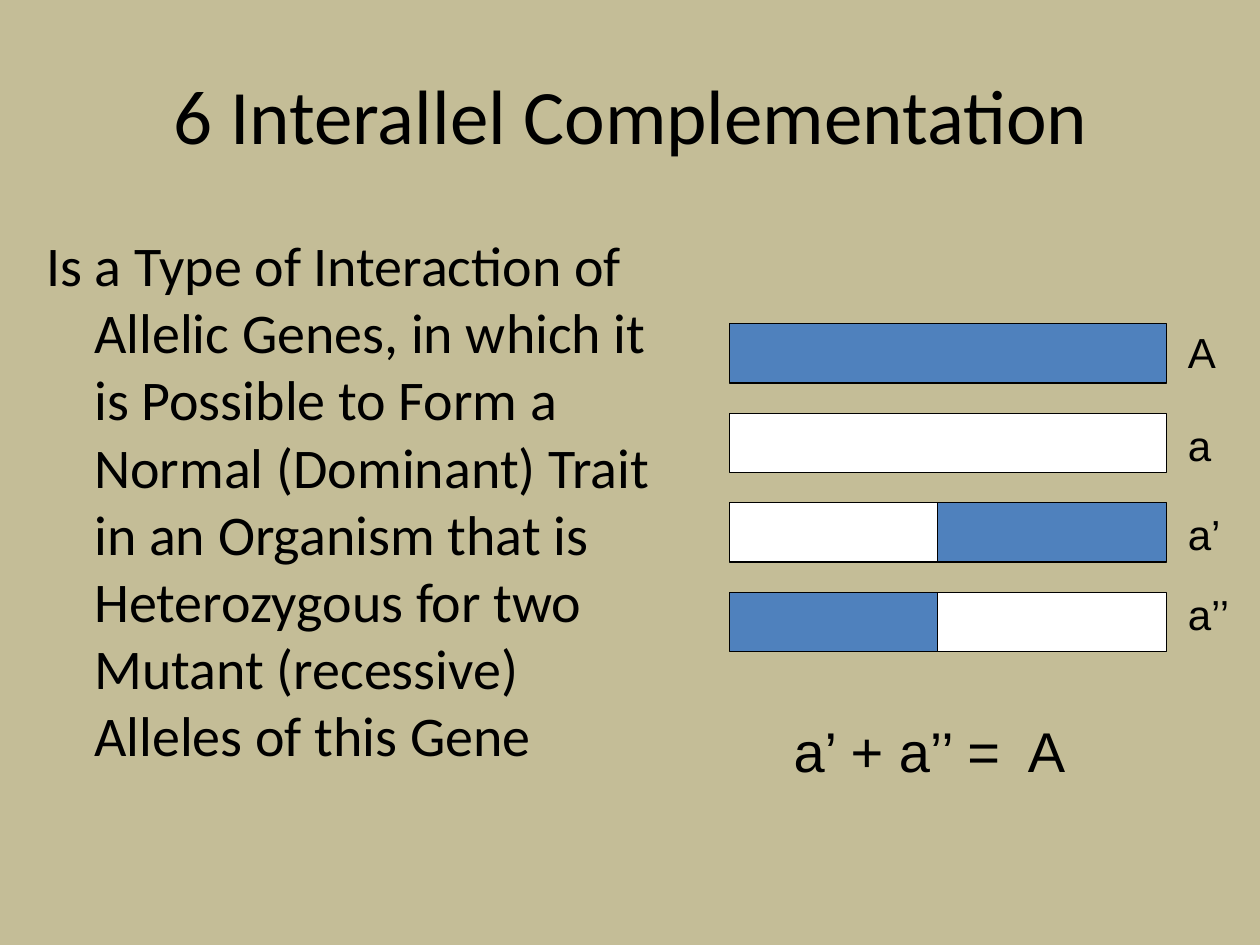
"""Build a slide on interallelic complementation with bars for each allele."""
import pptx
import pptx.dml.color
import pptx.enum.shapes
import pptx.enum.text
import pptx.util

Inches, Pt = pptx.util.Inches, pptx.util.Pt
PP_ALIGN, MSO_ANCHOR = pptx.enum.text.PP_ALIGN, pptx.enum.text.MSO_ANCHOR

TITLE = "6 Interallel Complementation"
DEFINITION = (
    "Is a Type of Interaction of Allelic Genes, in which it is Possible to Form "
    "a Normal (Dominant) Trait in an Organism that is Heterozygous for two "
    "Mutant (recessive) Alleles of this Gene"
)
FORMULA = "a’ + a’’ =  A"
BACKGROUND, BLACK, NORMAL, MUTANT = "C4BD97", "000000", "4F81BD", "FFFFFF"
ALLELES = [
    ("A", 2.54, 0.42, [NORMAL]),
    ("a", 3.28, 0.39, [MUTANT]),
    ("a’", 3.99, 0.46, [MUTANT, NORMAL]),
    ("a’’", 4.62, 0.54, [NORMAL, MUTANT]),
]
BAR_LEFT, BAR_TOP, BAR_W, BAR_H, BAR_PITCH = 5.79, 2.57, 3.47, 0.47, 0.71
HALF_W = 1.65
LABEL_LEFT = 9.33


def paint(fill, color):
    fill.solid()
    fill.fore_color.rgb = pptx.dml.color.RGBColor.from_string(color)


def write(sp, text, size, font="Arial", align=PP_ALIGN.LEFT,
          anchor=MSO_ANCHOR.TOP, wrap=False, hanging=0, before=0):
    tf = sp.text_frame
    tf.word_wrap = wrap
    tf.vertical_anchor = anchor
    p = tf.paragraphs[0]
    p.alignment = align
    p.space_before = Pt(before)
    if hanging:
        pPr = p._p.get_or_add_pPr()
        pPr.set("marL", str(Inches(hanging)))
        pPr.set("indent", str(-Inches(hanging)))
    r = p.add_run()
    r.text = text
    r.font.size = Pt(size)
    r.font.name = font
    paint(r.font.fill, BLACK)


def add_text(slide, box, text, size, **style):
    write(slide.shapes.add_textbox(*map(Inches, box)), text, size, **style)


def add_bar(slide, left, top, width, color):
    sp = slide.shapes.add_shape(
        pptx.enum.shapes.MSO_SHAPE.RECTANGLE,
        *map(Inches, (left, top, width, BAR_H)))
    sp.shadow.inherit = False
    paint(sp.fill, color)
    paint(sp.line.fill, BLACK)
    sp.line.width = Pt(0.75)


def main():
    prs = pptx.Presentation()
    prs.slide_width, prs.slide_height = Inches(10), Inches(7.5)
    slide = prs.slides.add_slide(prs.slide_layouts[5])
    paint(slide.background.fill, BACKGROUND)

    title = slide.shapes.title
    title.left, title.top, title.width, title.height = map(
        Inches, (0.51, 0.28, 9, 1.25))
    write(title, TITLE, 44, font="Calibri", align=PP_ALIGN.CENTER,
          anchor=MSO_ANCHOR.MIDDLE, wrap=True)
    add_text(slide, (0.27, 1.78, 5.2, 4.95), DEFINITION, 32, font="Calibri",
             wrap=True, hanging=0.38, before=6.4)

    for row, (name, label_top, label_w, colors) in enumerate(ALLELES):
        top = BAR_TOP + row * BAR_PITCH
        widths = [BAR_W] if len(colors) == 1 else [HALF_W, BAR_W - HALF_W]
        left = BAR_LEFT
        for color, width in zip(colors, widths):
            add_bar(slide, left, top, width, color)
            left += width
        add_text(slide, (LABEL_LEFT, label_top, label_w, 0.5), name, 24)

    add_text(slide, (6.2, 5.64, 2.43, 0.63), FORMULA, 32)
    prs.save("out.pptx")


if __name__ == "__main__":
    main()
